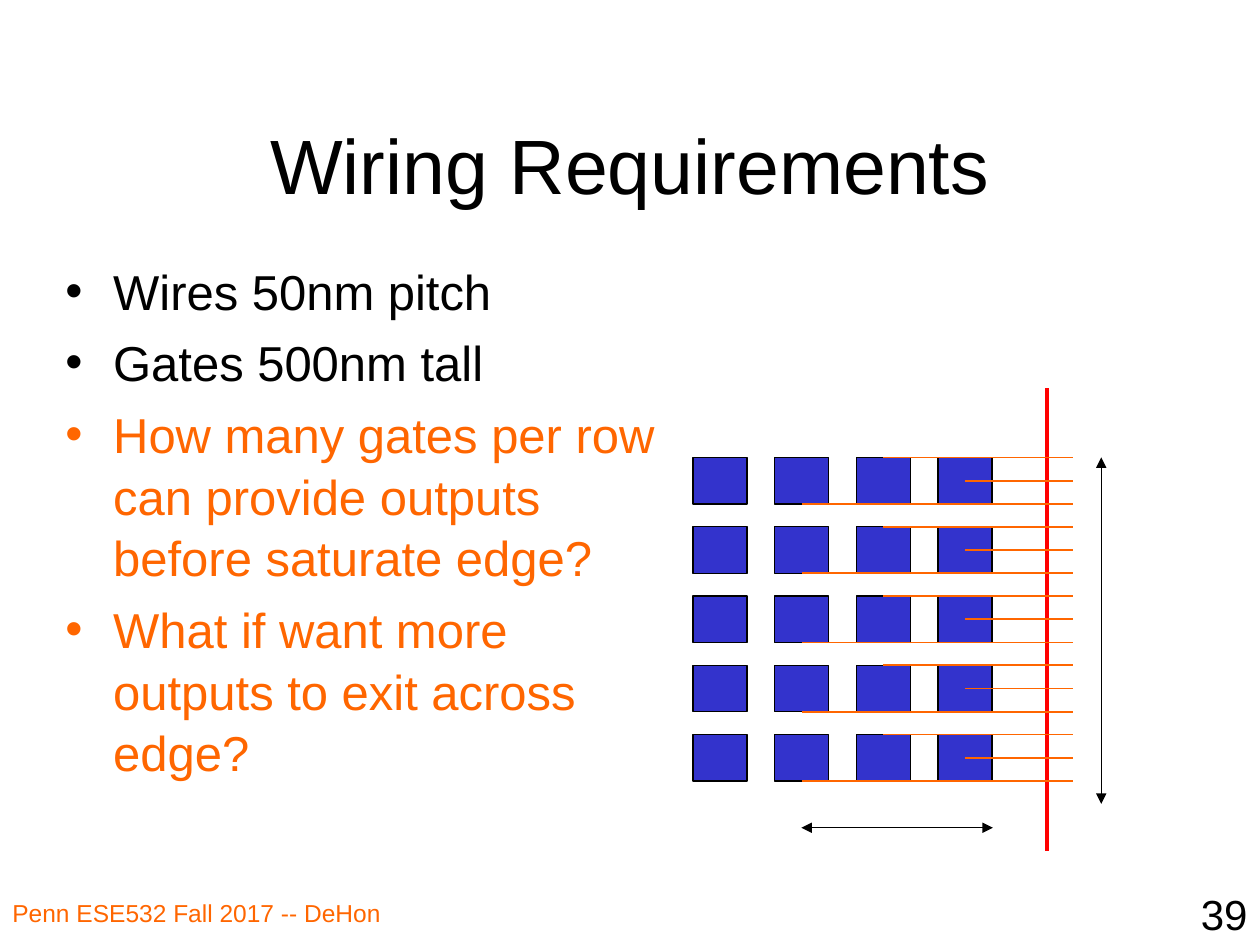
from dataclasses import dataclass

from lxml import etree
from pptx import Presentation
from pptx.dml.color import RGBColor
from pptx.enum.shapes import MSO_CONNECTOR, MSO_SHAPE
from pptx.enum.text import MSO_ANCHOR, PP_ALIGN
from pptx.oxml.ns import qn
from pptx.slide import Slide
from pptx.util import Inches, Pt

LEFT, CENTER, RIGHT = PP_ALIGN.LEFT, PP_ALIGN.CENTER, PP_ALIGN.RIGHT
TOP, MIDDLE = MSO_ANCHOR.TOP, MSO_ANCHOR.MIDDLE
RECTANGLE = MSO_SHAPE.RECTANGLE
STRAIGHT = MSO_CONNECTOR.STRAIGHT

BLACK = RGBColor(0x00, 0x00, 0x00)
ORANGE = RGBColor(0xFF, 0x66, 0x00)
RED = RGBColor(0xFF, 0x00, 0x00)
GATE_BLUE = RGBColor(0x33, 0x33, 0xCC)

FONT = "Arial"
ROWS, COLUMNS = 5, 4
GRID_LEFT, GRID_TOP = 5.5, 3.63
COLUMN_PITCH, ROW_PITCH = 0.648, 0.55
GATE_WIDTH, GATE_HEIGHT = 0.43, 0.37
WIRE_END = 8.52


@dataclass(frozen=True)
class Line:
    text: str
    color: RGBColor = BLACK


@dataclass(frozen=True)
class TextBlock:
    left: float
    top: float
    width: float
    height: float
    size: float
    lines: tuple[Line, ...]
    align: PP_ALIGN = LEFT
    anchor: MSO_ANCHOR = TOP
    bulleted: bool = False


@dataclass(frozen=True)
class Stroke:
    start: tuple[float, float]
    end: tuple[float, float]
    color: RGBColor
    weight: float
    arrows: bool = False


@dataclass(frozen=True)
class OutputWire:
    column: int
    height_share: float


TEXT_BLOCKS = (
    TextBlock(0, 7.08, 3.83, 0.42, 14, (Line("Penn ESE532 Fall 2017 -- DeHon", ORANGE),)),
    TextBlock(7.92, 7, 2.08, 0.5, 24, (Line("39"),), RIGHT),
    TextBlock(0.75, 0.67, 8.5, 1.25, 44, (Line("Wiring Requirements"),), CENTER, MIDDLE),
    TextBlock(
        0.42, 2, 5.08, 4.5, 28,
        (
            Line("Wires 50nm pitch"),
            Line("Gates 500nm tall"),
            Line("How many gates per row can provide outputs before saturate edge?", ORANGE),
            Line("What if want more outputs to exit across edge?", ORANGE),
        ),
        bulleted=True,
    ),
)
EDGE_AND_DIMENSIONS = (
    Stroke((8.31, 3.08), (8.31, 6.75), RED, 2.25),
    Stroke((8.74, 3.63), (8.74, 6.38), BLACK, 0.75, arrows=True),
    Stroke((6.36, 6.57), (7.88, 6.57), BLACK, 0.75, arrows=True),
)
OUTPUT_WIRES = (OutputWire(3, 0.5), OutputWire(2, 0), OutputWire(1, 1))


def add_bullet(paragraph) -> None:
    """Give a paragraph a hanging bullet and the body line spacing."""
    paragraph.space_before = Pt(5.6)
    paragraph.line_spacing = 1.05
    properties = paragraph._p.get_or_add_pPr()
    properties.set("marL", str(Inches(0.38)))
    properties.set("indent", str(-Inches(0.38)))
    etree.SubElement(properties, qn("a:buFont"), typeface=FONT)
    etree.SubElement(properties, qn("a:buChar"), char="•")


def add_text(slide: Slide, block: TextBlock) -> None:
    """Write a block of text, one paragraph per line."""
    box = slide.shapes.add_textbox(
        Inches(block.left), Inches(block.top), Inches(block.width), Inches(block.height)
    )
    frame = box.text_frame
    frame.word_wrap = True
    frame.vertical_anchor = block.anchor
    for index, line in enumerate(block.lines):
        paragraph = frame.add_paragraph() if index else frame.paragraphs[0]
        paragraph.text = line.text
        paragraph.alignment = block.align
        paragraph.font.name = FONT
        paragraph.font.size = Pt(block.size)
        paragraph.font.color.rgb = line.color
        if block.bulleted:
            add_bullet(paragraph)


def add_gate(slide: Slide, column: int, row: int) -> None:
    """Draw the gate at a grid position."""
    gate = slide.shapes.add_shape(
        RECTANGLE,
        Inches(GRID_LEFT + column * COLUMN_PITCH),
        Inches(GRID_TOP + row * ROW_PITCH),
        Inches(GATE_WIDTH),
        Inches(GATE_HEIGHT),
    )
    gate.shadow.inherit = False
    gate.fill.solid()
    gate.fill.fore_color.rgb = GATE_BLUE
    gate.line.color.rgb = BLACK
    gate.line.width = Pt(0.75)


def add_stroke(slide: Slide, stroke: Stroke) -> None:
    """Draw a straight line, with arrowheads at both ends if asked."""
    points = (Inches(value) for value in stroke.start + stroke.end)
    connector = slide.shapes.add_connector(STRAIGHT, *points)
    connector.line.color.rgb = stroke.color
    connector.line.width = Pt(stroke.weight)
    if stroke.arrows:
        outline = connector.line._get_or_add_ln()
        for end in ("a:headEnd", "a:tailEnd"):
            etree.SubElement(outline, qn(end), type="triangle")
    etree.SubElement(connector._element.spPr, qn("a:effectLst"))


def add_output_wire(slide: Slide, wire: OutputWire, row: int) -> None:
    """Run a wire from the middle of its gate past the edge."""
    start = GRID_LEFT + wire.column * COLUMN_PITCH + GATE_WIDTH / 2
    height = GRID_TOP + row * ROW_PITCH + wire.height_share * GATE_HEIGHT
    add_stroke(slide, Stroke((start, height), (WIRE_END, height), ORANGE, 1))


def main() -> None:
    """Build the wiring requirements slide."""
    presentation = Presentation()
    presentation.slide_width = Inches(10)
    presentation.slide_height = Inches(7.5)
    slide = presentation.slides.add_slide(presentation.slide_layouts[6])
    for block in TEXT_BLOCKS:
        add_text(slide, block)
    for column in range(COLUMNS):
        for row in range(ROWS):
            add_gate(slide, column, row)
    for stroke in EDGE_AND_DIMENSIONS:
        add_stroke(slide, stroke)
    for row in range(ROWS):
        for wire in OUTPUT_WIRES:
            add_output_wire(slide, wire, row)
    presentation.save("out.pptx")


if __name__ == "__main__":
    main()
